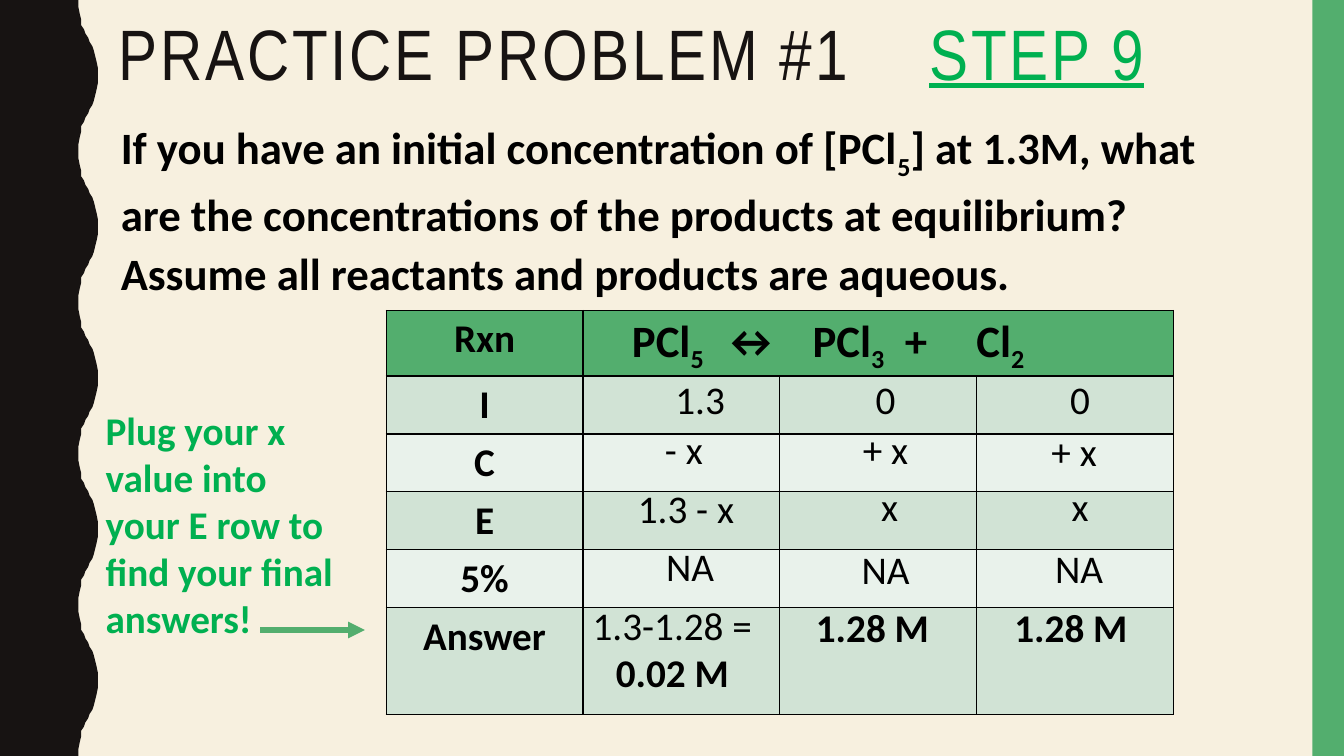
from dataclasses import dataclass

from lxml.etree import SubElement
from pptx import Presentation
from pptx.dml.color import RGBColor
from pptx.enum.shapes import MSO_CONNECTOR, MSO_SHAPE
from pptx.enum.text import MSO_ANCHOR, MSO_AUTO_SIZE, PP_ALIGN
from pptx.oxml.ns import qn
from pptx.shapes.autoshape import Shape
from pptx.slide import Slide
from pptx.table import _Cell
from pptx.text.text import _Paragraph
from pptx.util import Pt

CREAM = RGBColor(0xF7, 0xF0, 0xDF)
INK = RGBColor(0x17, 0x13, 0x12)
GREEN = RGBColor(0x53, 0xAE, 0x6E)
BRIGHT_GREEN = RGBColor(0x00, 0xB0, 0x50)
DARK_BAND = RGBColor(0xD1, 0xE3, 0xD5)
LIGHT_BAND = RGBColor(0xE9, 0xF2, 0xEB)
BLACK = RGBColor(0x00, 0x00, 0x00)

SLIDE_WIDTH, SLIDE_HEIGHT = 960, 540
WAVE_PERIOD, WAVE_COUNT = 108, 5
WAVE_RISE = [
    (56.2, 0), (56.2, 5), (56.9, 10.1), (57.6, 14.4), (58.3, 18), (59.8, 20.9), (61.2, 23.8),
    (62.6, 27.4), (64.1, 30.2), (65.5, 33.1), (67, 36), (68.4, 39.6), (69.1, 43.9), (69.8, 49),
    (69.8, 54),
]
COLUMN_WIDTH = 140.6
ROW_HEIGHTS = [46.5, 41.4, 41.4, 41.4, 41.4, 76]
ROW_LABELS = ["Rxn", "I", "C", "E", "5%", "Answer"]
REACTION_TABS = [30, 94, 159, 225, 276]


@dataclass(frozen=True)
class Box:
    left: float
    top: float
    width: float
    height: float


@dataclass(frozen=True)
class Piece:
    text: str
    subscript: bool = False


@dataclass(frozen=True)
class Entry:
    text: str
    left: float
    top: float
    width: float = 88.6
    bold: bool = False


QUESTION = [
    Piece("If you have an initial concentration of [PCl"),
    Piece("5", True),
    Piece("] at 1.3M, what are the concentrations of the products at equilibrium? "
          "Assume all reactants and products are aqueous."),
]
REACTION = [
    Piece("\tPCl"), Piece("5", True), Piece("\t↔\tPCl"), Piece("3", True),
    Piece("\t+\tCl"), Piece("2", True),
]
ENTRIES = [
    Entry("1.3", 455.8, 264.2), Entry("0", 588.2, 264.2), Entry("0", 727.2, 264.2),
    Entry("- x", 444.2, 300.2), Entry("+ x", 588.2, 300.2), Entry("+ x", 722.9, 301.7),
    Entry("1.3 - x", 445.7, 342.7), Entry("x", 591.1, 341.3), Entry("x", 727.2, 341.3),
    Entry("NA", 448.6, 383.8), Entry("NA", 588.2, 385.9), Entry("NA", 726.5, 385.2),
    Entry("1.28 M", 569.5, 427.7, 107.3, True), Entry("1.28 M", 714.2, 427.7, 101.5, True),
]


def style(paragraph: _Paragraph, size: float, color: RGBColor = BLACK, bold: bool = False,
          name: str = "Calibri") -> None:
    font = paragraph.font
    font.name, font.size, font.bold = name, Pt(size), bold
    font.color.rgb = color


def add_pieces(paragraph: _Paragraph, pieces: list[Piece]) -> None:
    for piece in pieces:
        run = paragraph.add_run()
        run.text = piece.text
        if piece.subscript:
            run._r.get_or_add_rPr().set("baseline", "-25000")


def add_tabs(paragraph: _Paragraph, positions: list[float]) -> None:
    properties = paragraph._p.get_or_add_pPr()
    tabs = properties.makeelement(qn("a:tabLst"), {})
    for position in positions:
        SubElement(tabs, qn("a:tab"), pos=str(Pt(position)), algn="l")
    default_font = properties.find(qn("a:defRPr"))
    default_font.addprevious(tabs)


def add_text_box(slide: Slide, box: Box) -> Shape:
    shape = slide.shapes.add_textbox(Pt(box.left), Pt(box.top), Pt(box.width), Pt(box.height))
    shape.text_frame.word_wrap = True
    return shape


def fill_plain(shape: Shape, color: RGBColor) -> None:
    shape.shadow.inherit = False
    shape.fill.solid()
    shape.fill.fore_color.rgb = color
    shape.line.fill.background()


def add_side_bands(slide: Slide) -> None:
    wave = WAVE_RISE + [(x, WAVE_PERIOD - y) for x, y in reversed(WAVE_RISE[:-1])]
    edge = [(x, y + WAVE_PERIOD * index) for index in range(WAVE_COUNT) for x, y in wave]
    builder = slide.shapes.build_freeform(0, 0, scale=float(Pt(1)))
    builder.add_line_segments(edge + [(0, SLIDE_HEIGHT)], close=True)
    fill_plain(builder.convert_to_shape(), INK)
    bar = slide.shapes.add_shape(MSO_SHAPE.RECTANGLE, Pt(937.5), Pt(0), Pt(22.5), Pt(SLIDE_HEIGHT))
    fill_plain(bar, GREEN)


def add_title(slide: Slide) -> None:
    paragraph = add_text_box(slide, Box(77.8, 10.1, 801.4, 117.4)).text_frame.paragraphs[0]
    paragraph.line_spacing = 0.9
    style(paragraph, 51, INK, name="Arial Narrow")
    add_tabs(paragraph, [579])
    add_pieces(paragraph, [Piece("PRACTICE PROBLEM #1\t"), Piece("STEP 9")])
    for run in paragraph.runs:
        run._r.get_or_add_rPr().set("spc", "200")
    step = paragraph.runs[1].font
    step.color.rgb = BRIGHT_GREEN
    step.underline = True


def add_question(slide: Slide) -> None:
    paragraph = add_text_box(slide, Box(79.2, 77.8, 801.4, 198)).text_frame.paragraphs[0]
    paragraph.line_spacing = 1.1
    paragraph.space_before = Pt(7)
    style(paragraph, 32, bold=True)
    add_pieces(paragraph, QUESTION)


def paint_cell(cell: _Cell, color: RGBColor) -> None:
    cell.fill.solid()
    cell.fill.fore_color.rgb = color
    properties = cell._tc.get_or_add_tcPr()
    for index, side in enumerate(("lnL", "lnR", "lnT", "lnB")):
        border = properties.makeelement(qn(f"a:{side}"), {"w": str(Pt(1))})
        SubElement(SubElement(border, qn("a:solidFill")), qn("a:srgbClr"), val=str(BLACK))
        properties.insert(index, border)


def add_ice_table(slide: Slide) -> None:
    table = slide.shapes.add_table(len(ROW_LABELS), 4, Pt(275.8), Pt(221.8),
                                   Pt(4 * COLUMN_WIDTH), Pt(sum(ROW_HEIGHTS))).table
    table.first_row = table.horz_banding = False
    for column in table.columns:
        column.width = Pt(COLUMN_WIDTH)
    for index, (label, height) in enumerate(zip(ROW_LABELS, ROW_HEIGHTS)):
        table.rows[index].height = Pt(height)
        band = GREEN if index == 0 else DARK_BAND if index % 2 else LIGHT_BAND
        for cell in table.rows[index].cells:
            paint_cell(cell, band)
        paragraph = table.cell(index, 0).text_frame.paragraphs[0]
        paragraph.text = label
        paragraph.alignment = PP_ALIGN.CENTER
        style(paragraph, 28, bold=True)
    reaction = table.cell(0, 1)
    reaction.merge(table.cell(0, 3))
    reaction.vertical_anchor = MSO_ANCHOR.MIDDLE
    reaction.margin_left = reaction.margin_right = Pt(5)
    reaction.margin_top = reaction.margin_bottom = Pt(0)
    paragraph = reaction.text_frame.paragraphs[0]
    paragraph.line_spacing = 1.07
    style(paragraph, 32, bold=True)
    add_tabs(paragraph, REACTION_TABS)
    add_pieces(paragraph, REACTION)


def add_entry(slide: Slide, entry: Entry) -> Shape:
    shape = add_text_box(slide, Box(entry.left, entry.top, entry.width, 41.2))
    shape.text_frame.auto_size = MSO_AUTO_SIZE.SHAPE_TO_FIT_TEXT
    paragraph = shape.text_frame.paragraphs[0]
    paragraph.text = entry.text
    paragraph.alignment = PP_ALIGN.CENTER
    style(paragraph, 28, bold=entry.bold)
    return shape


def add_entries(slide: Slide) -> None:
    for entry in ENTRIES:
        add_entry(slide, entry)
    remainder = add_entry(slide, Entry("1.3-1.28 =", 414, 426.2, 132.5))
    remainder.height = Pt(75)
    paragraph = remainder.text_frame.add_paragraph()
    paragraph.text = "0.02 M"
    paragraph.alignment = PP_ALIGN.CENTER
    style(paragraph, 28, bold=True)


def add_hint(slide: Slide) -> None:
    shape = add_text_box(slide, Box(68.4, 286.6, 184.3, 211))
    shape.text_frame.auto_size = MSO_AUTO_SIZE.SHAPE_TO_FIT_TEXT
    paragraph = shape.text_frame.paragraphs[0]
    paragraph.text = "Plug your x value into your E row to find your final answers!"
    style(paragraph, 28, BRIGHT_GREEN, bold=True)
    arrow = slide.shapes.add_connector(MSO_CONNECTOR.STRAIGHT, Pt(185.8), Pt(450), Pt(260.6), Pt(450))
    arrow.line.color.rgb = GREEN
    arrow.line.width = Pt(4)
    properties = arrow._element.spPr
    SubElement(properties.find(qn("a:ln")), qn("a:tailEnd"), type="triangle")
    SubElement(properties, qn("a:effectLst"))


def main() -> None:
    """Build the equilibrium practice slide and save it."""
    presentation = Presentation()
    presentation.slide_width, presentation.slide_height = Pt(SLIDE_WIDTH), Pt(SLIDE_HEIGHT)
    slide = presentation.slides.add_slide(presentation.slide_layouts[6])
    slide.background.fill.solid()
    slide.background.fill.fore_color.rgb = CREAM
    for draw in (add_side_bands, add_title, add_question, add_ice_table, add_entries, add_hint):
        draw(slide)
    presentation.save("out.pptx")


if __name__ == "__main__":
    main()
